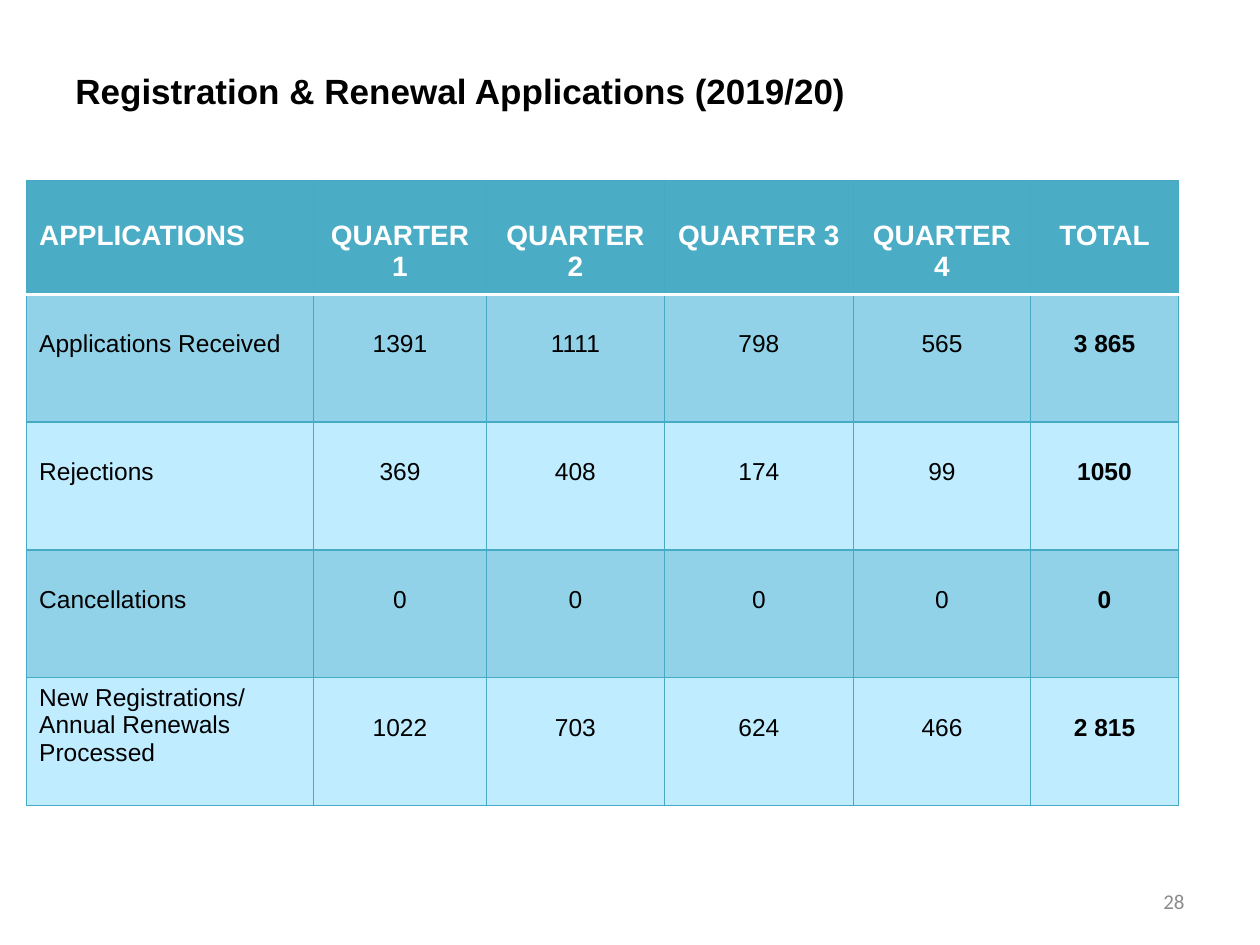
from dataclasses import dataclass

from lxml.etree import SubElement
from pptx import Presentation
from pptx.dml.color import RGBColor as RGB
from pptx.enum.text import MSO_ANCHOR as ANCHOR, PP_ALIGN as ALIGN
from pptx.oxml.ns import qn
from pptx.util import Pt


@dataclass(frozen=True)
class Theme:
    ink: str = "000000"
    white: str = "FFFFFF"
    muted: str = "8C8C8C"
    header: str = "4BACC6"
    odd_row: str = "91D2E8"
    even_row: str = "BFECFF"
    grid: str = "46AAC5"
    font: str = "Arial"
    number_font: str = "Calibri"
    title_size: float = 20
    header_size: float = 16
    body_size: float = 14
    number_size: float = 12


HEADINGS = ["APPLICATIONS", "QUARTER 1", "QUARTER 2", "QUARTER 3", "QUARTER 4", "TOTAL"]
APPLICATIONS = [
    ["Applications Received", "1391", "1111", "798", "565", "3 865"],
    ["Rejections", "369", "408", "174", "99", "1050"],
    ["Cancellations", "0", "0", "0", "0", "0"],
    ["New Registrations/ Annual Renewals Processed", "1022", "703", "624", "466", "2 815"],
]
COLUMN_WIDTHS = [164, 98.8, 101.7, 108, 101.3, 84.5]
HEADER_HEIGHT, ROW_HEIGHT = 63.4, 73.1
CELL_MARGIN = 3.6
LINE_HEIGHT = 1.22


class SlideBuilder:
    def __init__(self, slide, theme):
        self.slide = slide
        self.theme = theme

    def set_text(self, paragraph, text, size, color, bold=False, align=ALIGN.LEFT, font=None):
        paragraph.text = text
        paragraph.alignment = align
        style = paragraph.font
        style.name = font or self.theme.font
        style.size = Pt(size)
        style.bold = bold
        style.color.rgb = RGB.from_string(color)

    def text(self, left, top, width, height, text, size, color, **style):
        box = self.slide.shapes.add_textbox(Pt(left), Pt(top), Pt(width), Pt(height))
        frame = box.text_frame
        frame.word_wrap = True
        frame.vertical_anchor = ANCHOR.MIDDLE
        self.set_text(frame.paragraphs[0], text, size, color, **style)

    def border(self, cell, side, color, width):
        """Draw one cell side: L, R, T or B."""
        line = SubElement(cell._tc.get_or_add_tcPr(), qn(f"a:ln{side}"), w=str(Pt(width)))
        SubElement(SubElement(line, qn("a:solidFill")), qn("a:srgbClr"), val=color)

    def cell(self, cell, text, row, column):
        theme = self.theme
        is_header = row == 0
        size = theme.header_size if is_header else theme.body_size
        for side in "LRTB":
            under_header = (row, side) in ((0, "B"), (1, "T"))
            self.border(cell, side, *((theme.white, 2) if under_header else (theme.grid, 0.75)))
        fill = theme.header if is_header else theme.odd_row if row % 2 else theme.even_row
        cell.fill.solid()
        cell.fill.fore_color.rgb = RGB.from_string(fill)

        # Text starts one line down, except the long label of the last row.
        is_long_label = row == len(APPLICATIONS) and column == 0
        lead = 0 if is_long_label else size * LINE_HEIGHT
        cell.margin_top = Pt(round(CELL_MARGIN + lead, 1))
        self.set_text(
            cell.text_frame.paragraphs[0], text, size,
            theme.white if is_header else theme.ink,
            bold=is_header or column == len(HEADINGS) - 1,
            align=ALIGN.CENTER if column else ALIGN.LEFT,
        )

    def table(self, left, top, records):
        heights = [HEADER_HEIGHT] + [ROW_HEIGHT] * (len(records) - 1)
        table = self.slide.shapes.add_table(
            len(records), len(COLUMN_WIDTHS), Pt(left), Pt(top),
            Pt(sum(COLUMN_WIDTHS)), Pt(sum(heights)),
        ).table
        table.first_row = table.horz_banding = False
        for column, width in zip(table.columns, COLUMN_WIDTHS):
            column.width = Pt(width)
        for row, (record, height) in enumerate(zip(records, heights)):
            table.rows[row].height = Pt(height)
            for column, value in enumerate(record):
                self.cell(table.cell(row, column), value, row, column)


def main():
    deck = Presentation()
    deck.slide_width, deck.slide_height = Pt(720), Pt(540)
    theme = Theme()
    builder = SlideBuilder(deck.slides.add_slide(deck.slide_layouts[6]), theme)
    builder.text(36, 23, 648, 58, "Registration & Renewal Applications (2019/20)",
                 theme.title_size, theme.ink, bold=True)
    builder.table(15.2, 103, [HEADINGS] + APPLICATIONS)
    builder.text(516, 500.5, 168, 28.8, "28", theme.number_size, theme.muted,
                 align=ALIGN.RIGHT, font=theme.number_font)
    deck.save("out.pptx")


if __name__ == "__main__":
    main()
